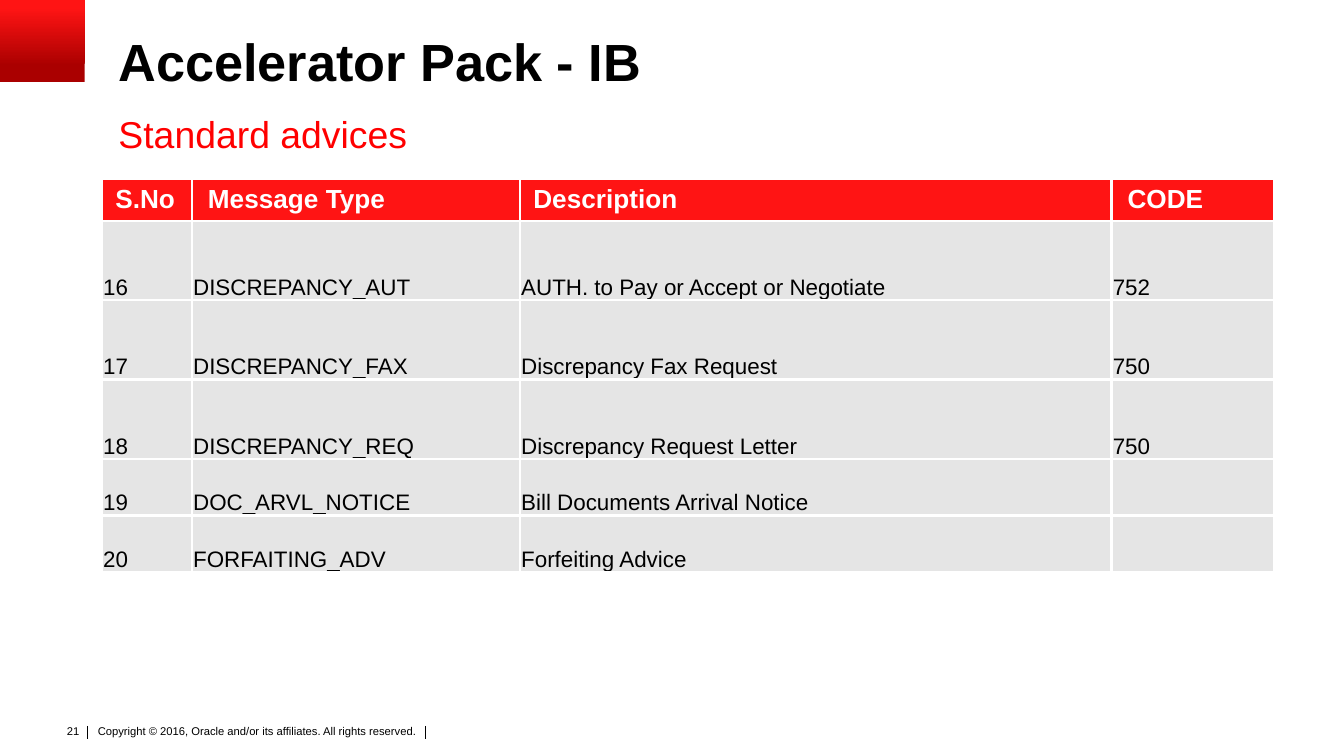
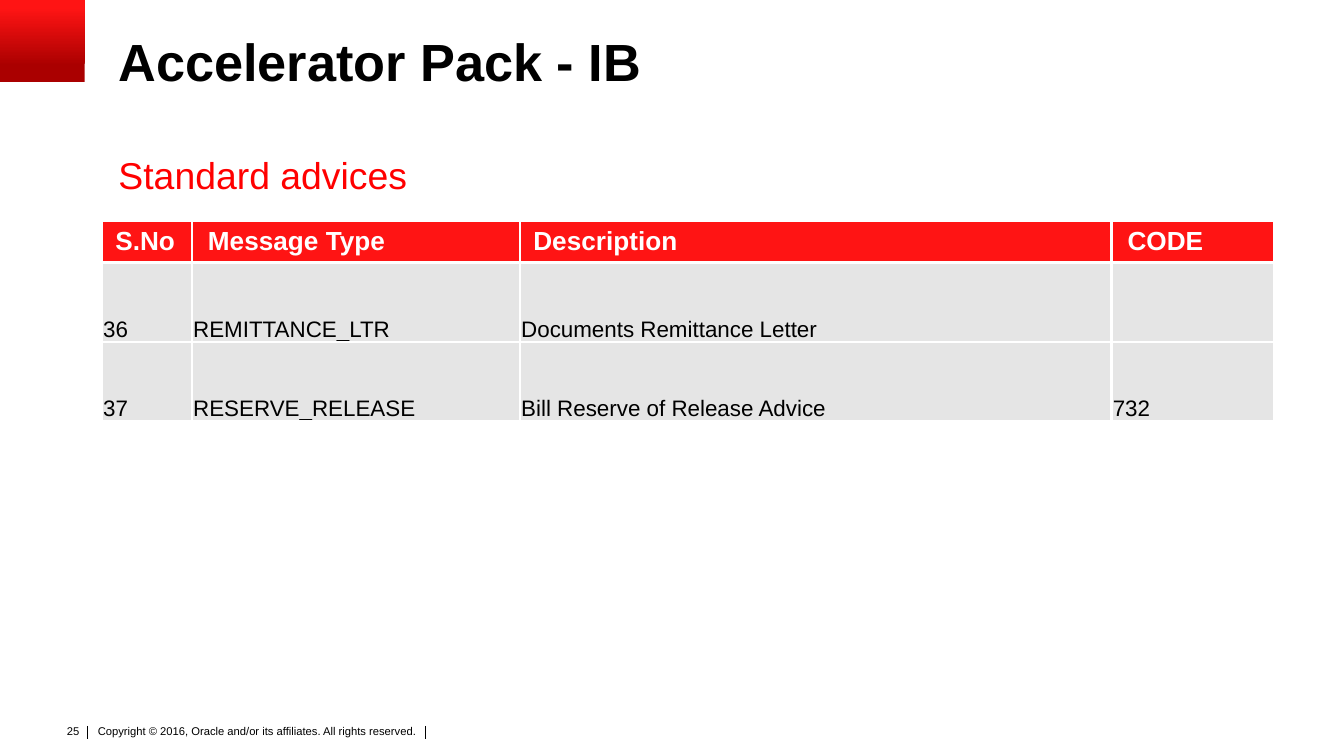
"""Builds two slides listing the standard advices of the accelerator pack."""
from lxml import etree
from pptx import Presentation
from pptx.dml.color import RGBColor
from pptx.enum.shapes import MSO_CONNECTOR, MSO_SHAPE
from pptx.enum.text import MSO_ANCHOR, PP_ALIGN
from pptx.oxml import parse_xml
from pptx.oxml.ns import nsdecls, qn
from pptx.util import Cm, Pt

RECT, LINE = MSO_SHAPE.RECTANGLE, MSO_CONNECTOR.STRAIGHT
MIDDLE, BOTTOM = MSO_ANCHOR.MIDDLE, MSO_ANCHOR.BOTTOM
LEFT, RIGHT = PP_ALIGN.LEFT, PP_ALIGN.RIGHT

BLACK = RGBColor(0x00, 0x00, 0x00)
WHITE = RGBColor(0xFF, 0xFF, 0xFF)
RED = RGBColor(0xFF, 0x00, 0x00)
BRAND_RED = RGBColor(0xFF, 0x14, 0x14)
DARK_RED = RGBColor(0xAA, 0x00, 0x00)
GREY = RGBColor(0xE5, 0xE5, 0xE5)

FONT = "Arial"
TITLE = "Accelerator Pack - IB"
SUBTITLE = "Standard advices"
COPYRIGHT = "Copyright © 2016, Oracle and/or its affiliates. All rights reserved."
HEADERS = ("S.No", "Message Type", "Description", "CODE")
COL_WIDTHS = (1.7, 6.2, 11.18, 3.07)
HEADER_INSETS = (0.25, 0.3, 0.25, 0.3)
HEADER_HEIGHT, TALL, SHORT = 0.79, 1.5, 1.07

PAGES = [
    ("21", 2.11, 3.38, [
        (TALL, "16", "DISCREPANCY_AUT", "AUTH. to Pay or Accept or Negotiate", "752"),
        (TALL, "17", "DISCREPANCY_FAX", "Discrepancy Fax Request", "750"),
        (TALL, "18", "DISCREPANCY_REQ", "Discrepancy Request Letter", "750"),
        (SHORT, "19", "DOC_ARVL_NOTICE", "Bill Documents Arrival Notice", ""),
        (SHORT, "20", "FORFAITING_ADV", "Forfeiting Advice", ""),
    ]),
    ("25", 2.87, 4.17, [
        (TALL, "36", "REMITTANCE_LTR", "Documents Remittance Letter", ""),
        (TALL, "37", "RESERVE_RELEASE", "Bill Reserve of Release Advice", "732"),
    ]),
]


def add_text(s, text, box, size, color=BLACK, bold=False, insets=(0, 0), align=LEFT, wrap=True):
    """Add a one-paragraph text box and return its paragraph."""
    tf = s.shapes.add_textbox(*map(Cm, box)).text_frame
    tf.word_wrap = wrap
    tf.margin_left = tf.margin_right = Cm(insets[0])
    tf.margin_top = tf.margin_bottom = Cm(insets[1])
    tf.text = text
    p = tf.paragraphs[0]
    p.alignment = align
    style_font(p.runs[0].font, size, color, bold)
    return p


def style_font(font, size, color, bold):
    """Apply the shared typeface with a size, colour and weight."""
    font.name, font.size, font.bold = FONT, Pt(size), bold
    font.color.rgb = color


prs = Presentation()
prs.slide_width, prs.slide_height = Cm(25.4), Cm(14.29)

for number, subtitle_top, table_top, rows in PAGES:
    s = prs.slides.add_slide(prs.slide_layouts[6])

    add_text(s, COPYRIGHT, (1.75, 13.64, 6.96, 0.61), 6, insets=(0.1, 0.05))
    for x in (1.65, 8.04):
        rule = s.shapes.add_connector(LINE, Cm(x), Cm(13.72), Cm(x), Cm(13.97))
        rule.line.color.rgb = BLACK
        rule.line.width = Pt(0.5)
        etree.SubElement(rule._element.spPr, qn("a:effectLst"))
    add_text(s, number, (0.99, 13.56, 0.76, 0.51), 6, insets=(0.25, 0.13), align=RIGHT, wrap=False)

    corner = s.shapes.add_shape(RECT, 0, 0, Cm(1.6), Cm(1.55))
    corner.shadow.inherit = False
    corner.line.fill.background()
    corner.fill.gradient()
    corner.fill.gradient_angle = 90
    stops = corner.fill.gradient_stops
    for stop, position, color in zip(stops, (0.2, 0.9), (DARK_RED, BRAND_RED)):
        stop.position = position
        stop.color.rgb = color

    add_text(s, SUBTITLE, (2.24, subtitle_top, 22.86, 0.84), 20, RED)
    add_text(s, TITLE, (2.24, 0.69, 21.59, 2.11), 28, bold=True).line_spacing = 0.9

    heights = [HEADER_HEIGHT] + [row[0] for row in rows]
    texts = [HEADERS] + [row[1:] for row in rows]
    table = s.shapes.add_table(len(texts), len(HEADERS), Cm(1.93), Cm(table_top),
                               Cm(sum(COL_WIDTHS)), Cm(sum(heights))).table
    table.horz_banding = False
    for column, width in zip(table.columns, COL_WIDTHS):
        column.width = Cm(width)
    for i, (row, height) in enumerate(zip(table.rows, heights)):
        row.height = Cm(height)
        header = i == 0
        for j, cell in enumerate(row.cells):
            cell.text = texts[i][j]
            cell.vertical_anchor = MIDDLE if header else BOTTOM
            cell.margin_left = Cm(HEADER_INSETS[j] if header else 0.02)
            cell.margin_right = Cm(0.25 if header else 0.02)
            cell.margin_top = Cm(0.1 if header else 0.02)
            cell.margin_bottom = Cm(0.1 if header else 0)
            cell.fill.solid()
            cell.fill.fore_color.rgb = BRAND_RED if header else GREY
            for r in cell.text_frame.paragraphs[0].runs:
                style_font(r.font, 14 if header else 12, WHITE if header else BLACK, header)
            tcPr = cell._tc.get_or_add_tcPr()
            for k, side in enumerate(("lnL", "lnR", "lnT", "lnB")):
                tcPr.insert(k, parse_xml(
                    f'<a:{side} {nsdecls("a")} w="{Pt(1.5)}"><a:solidFill>'
                    f'<a:srgbClr val="{WHITE}"/></a:solidFill></a:{side}>'))

prs.save("out.pptx")
